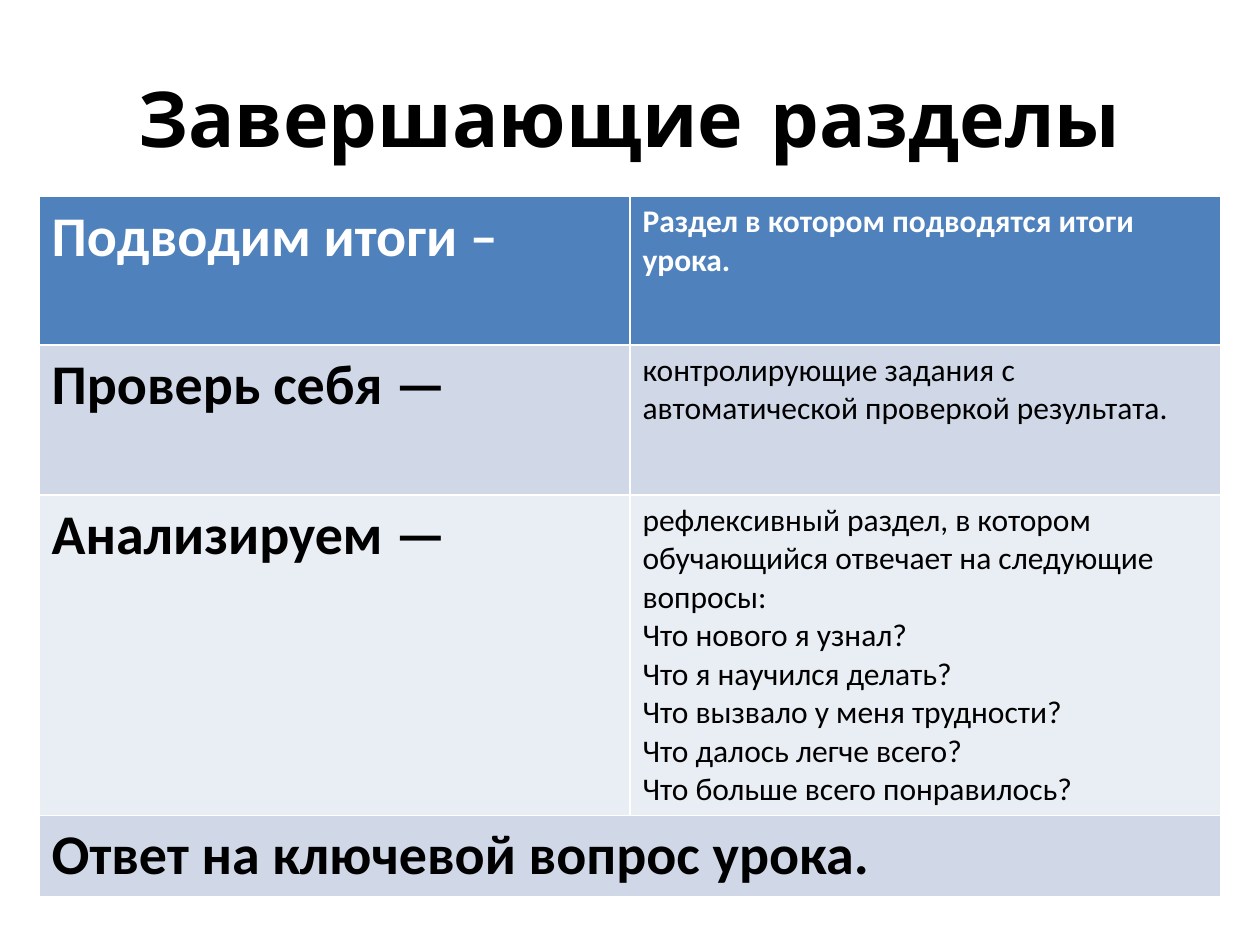
from dataclasses import dataclass

from pptx import Presentation
from pptx.dml.color import RGBColor
from pptx.enum.text import MSO_ANCHOR, PP_ALIGN
from pptx.util import Inches, Pt

CENTER = PP_ALIGN.CENTER
MIDDLE = MSO_ANCHOR.MIDDLE
TITLE_ONLY = 5


@dataclass(frozen=True)
class Theme:
    """Fonts, type sizes and colours of the slide."""
    title_font: str = "Comic Neue"
    body_font: str = "Calibri"
    title_size: int = 44
    label_size: int = 32
    note_size: int = 18
    text: str = "000000"
    header_text: str = "FFFFFF"
    header_fill: str = "4F81BD"
    bands: tuple = ("E9EDF4", "D0D8E8")


THEME = Theme()
TITLE = "Завершающие разделы"
SECTIONS = [
    (1.18, "Подводим итоги –", "Раздел в котором подводятся итоги урока."),
    (1.19, "Проверь себя —",
     "контролирующие задания с автоматической проверкой результата."),
    (2.54, "Анализируем —",
     "рефлексивный раздел, в котором обучающийся отвечает на следующие вопросы:\n"
     "Что нового я узнал?\n"
     "Что я научился делать?\n"
     "Что вызвало у меня трудности?\n"
     "Что далось легче всего?\n"
     "Что больше всего понравилось?"),
    (0.64, "Ответ на ключевой вопрос урока.", None),
]


def write_text(tf, text, font, size, color, bold):
    """Fill a text frame and format all of its runs."""
    tf.text = text
    for p in tf.paragraphs:
        for r in p.runs:
            r.font.name = font
            r.font.size = Pt(size)
            r.font.bold = bold
            r.font.color.rgb = RGBColor.from_string(color)


def add_title(s):
    """Place and format the title placeholder."""
    sp = s.shapes.title
    sp.left, sp.top = Inches(0.5), Inches(0.3)
    sp.width, sp.height = Inches(9), Inches(1.25)
    tf = sp.text_frame
    write_text(tf, TITLE, THEME.title_font, THEME.title_size, THEME.text, True)
    tf.vertical_anchor = MIDDLE
    tf.paragraphs[0].alignment = CENTER


def fill_cell(cell, text, size, bold, header, fill):
    """Colour a table cell and write its text."""
    cell.fill.solid()
    cell.fill.fore_color.rgb = RGBColor.from_string(fill)
    color = THEME.header_text if header else THEME.text
    write_text(cell.text_frame, text, THEME.body_font, size, color, bold)


def add_sections_table(s):
    """Add the table of closing lesson sections."""
    height = sum(section[0] for section in SECTIONS)
    table = s.shapes.add_table(len(SECTIONS), 2, Inches(0.31), Inches(1.56),
                               Inches(9.38), Inches(height)).table
    for i, (row_height, label, note) in enumerate(SECTIONS):
        table.rows[i].height = Inches(row_height)
        header = i == 0
        fill = THEME.header_fill if header else THEME.bands[i % 2]
        left, right = table.cell(i, 0), table.cell(i, 1)
        fill_cell(left, label, THEME.label_size, True, header, fill)
        if note is None:
            left.merge(right)
        else:
            fill_cell(right, note, THEME.note_size, header, header, fill)


def main():
    """Build and save the slide."""
    prs = Presentation()
    prs.slide_width, prs.slide_height = Inches(10), Inches(7.5)
    s = prs.slides.add_slide(prs.slide_layouts[TITLE_ONLY])
    add_title(s)
    add_sections_table(s)
    prs.save("out.pptx")


if __name__ == "__main__":
    main()
